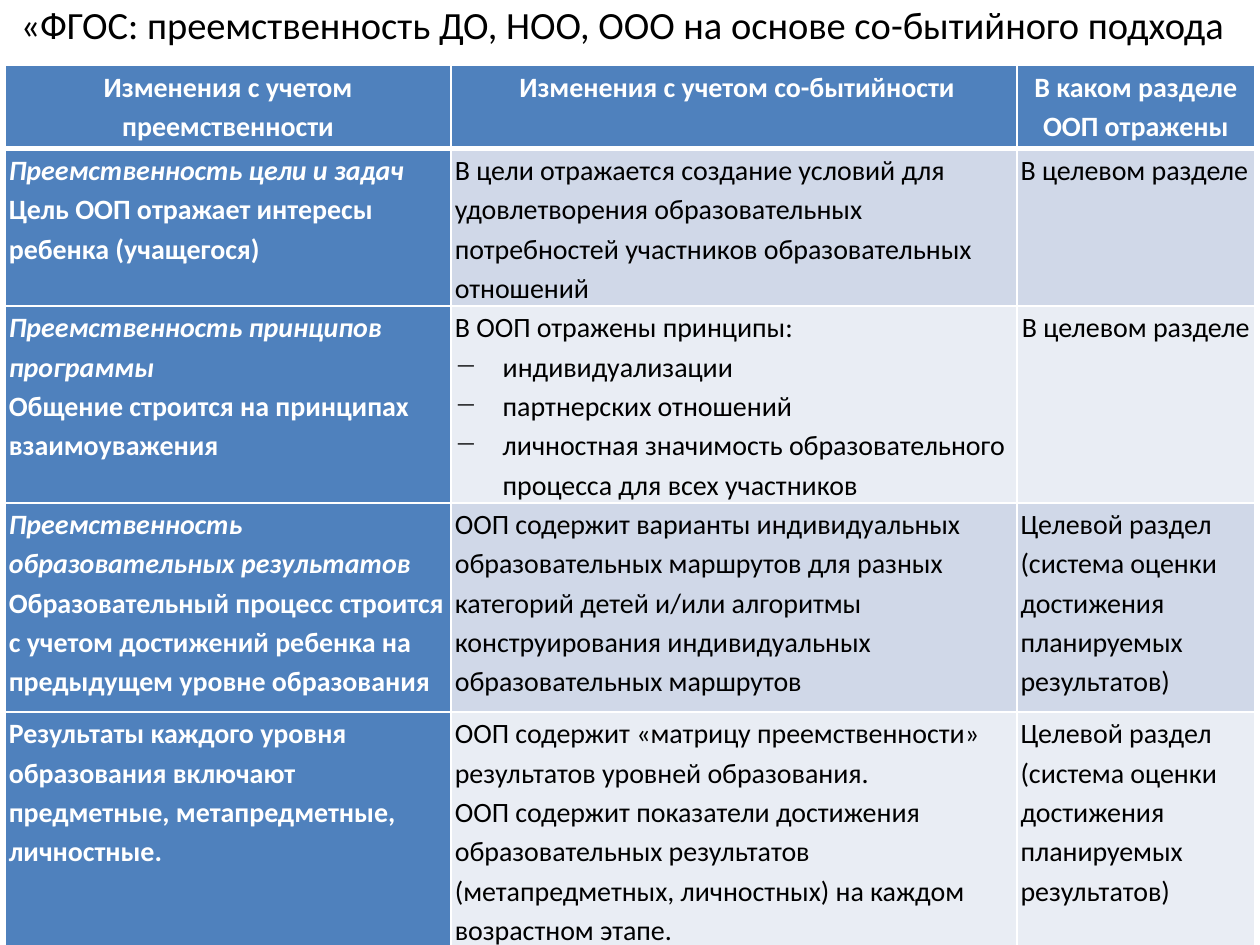
"""Builds a one-slide table on continuity between education levels."""
import pptx
import pptx.dml.color
import pptx.enum.text
import pptx.oxml
import pptx.oxml.ns
import pptx.util

Inches = pptx.util.Inches
Pt = pptx.util.Pt
CENTER = pptx.enum.text.PP_ALIGN.CENTER
LEFT = pptx.enum.text.PP_ALIGN.LEFT
WHITE, BLACK, BLUE = "FFFFFF", "000000", "4F81BD"
BANDS = ["D0D8E8", "E9EDF4"]


def color(value):
    return pptx.dml.color.RGBColor.from_string(value)


def element(xml):
    return pptx.oxml.parse_xml(xml.replace(" ", f" {pptx.oxml.ns.nsdecls('a')} ", 1))


class SlideBuilder:
    def __init__(self, slide, font="Calibri"):
        self.slide = slide
        self.font = font

    def style(self, paragraph, size, ink, bold=False, italic=False, align=LEFT):
        paragraph.alignment = align
        font = paragraph.font
        font.name, font.size = self.font, Pt(size)
        font.bold, font.italic = bold, italic
        font.color.rgb = color(ink)

    def title(self, text, left, top, width, height):
        box = self.slide.shapes.add_textbox(*map(Inches, (left, top, width, height)))
        frame = box.text_frame
        frame.word_wrap = True
        frame.vertical_anchor = pptx.enum.text.MSO_ANCHOR.MIDDLE
        frame.text = text
        self.style(frame.paragraphs[0], 22, BLACK, align=CENTER)

    def border(self, cell, sides):
        properties = cell._tc.get_or_add_tcPr()
        for index, (side, points) in enumerate(sides.items()):
            properties.insert(index, element(
                f'<a:ln{side} w="{Pt(points)}"><a:solidFill>'
                f'<a:srgbClr val="{WHITE}"/></a:solidFill></a:ln{side}>'))

    def bullet(self, paragraph):
        properties = paragraph._p.get_or_add_pPr()
        properties.set("marL", str(Inches(0.38)))
        properties.set("indent", str(-Inches(0.38)))
        properties.append(element('<a:buChar char="−"/>'))

    def cell(self, cell, lines, fill, ink, bold, align):
        cell.margin_left = cell.margin_right = Inches(0.03)
        cell.margin_top = cell.margin_bottom = 0
        cell.fill.solid()
        cell.fill.fore_color.rgb = color(fill)
        frame = cell.text_frame
        for index, (text, kind) in enumerate(lines):
            paragraph = frame.add_paragraph() if index else frame.paragraphs[0]
            paragraph.text = text
            paragraph.line_spacing = 1.15
            if kind == "bullet":
                self.bullet(paragraph)
            self.style(paragraph, 16, ink, bold, kind == "italic",
                       CENTER if kind == "center" else align)

    def table(self, rows, left, top, widths, heights):
        table = self.slide.shapes.add_table(
            len(rows), len(widths), Inches(left), Inches(top),
            Inches(sum(widths)), Inches(sum(heights))).table
        for column, width in zip(table.columns, widths):
            column.width = Inches(width)
        for row, height in zip(table.rows, heights):
            row.height = Inches(height)
        for r, row in enumerate(rows):
            for c, lines in enumerate(row):
                heading = r == 0 or c == 0
                cell = table.cell(r, c)
                self.cell(cell, lines, BLUE if heading else BANDS[(r - 1) % 2],
                          WHITE if heading else BLACK, heading,
                          LEFT if r else CENTER)
                sides = {"L": 1, "R": 1}
                if r == 0:
                    sides["T"] = 1
                sides["B"] = 1 if r else 3
                self.border(cell, sides)


def plain(*texts):
    return [(text, "plain") for text in texts]


def topic(name, text):
    return [(name, "italic"), (text, "plain")]


RESULTS_SECTION = plain("Целевой раздел (система оценки достижения планируемых результатов)")
PRINCIPLES = ["индивидуализации", "партнерских отношений",
              "личностная значимость образовательного процесса для всех участников"]
ROWS = [
    [plain("Изменения с учетом преемственности"),
     plain(" Изменения с учетом со-бытийности"),
     plain("В каком разделе ООП отражены")],
    [topic("Преемственность цели и задач",
           "Цель ООП отражает интересы ребенка (учащегося)"),
     plain("В цели отражается создание условий для удовлетворения образовательных "
           "потребностей участников образовательных отношений"),
     plain("В целевом разделе")],
    [topic("Преемственность принципов программы",
           "Общение строится на принципах взаимоуважения"),
     plain("В ООП отражены принципы:") + [(text, "bullet") for text in PRINCIPLES],
     [("В целевом разделе", "center")]],
    [topic("Преемственность образовательных результатов",
           "Образовательный процесс строится с учетом достижений ребенка на "
           "предыдущем уровне образования"),
     plain("ООП содержит варианты индивидуальных образовательных маршрутов для разных "
           "категорий детей и/или алгоритмы конструирования индивидуальных "
           "образовательных маршрутов"),
     RESULTS_SECTION],
    [plain("Результаты каждого уровня образования включают предметные, "
           "метапредметные, личностные."),
     plain("ООП содержит «матрицу преемственности» результатов уровней образования.",
           "ООП содержит показатели достижения образовательных результатов "
           "(метапредметных, личностных) на каждом возрастном этапе."),
     RESULTS_SECTION],
]


def main():
    deck = pptx.Presentation()
    deck.slide_width, deck.slide_height = Inches(10), Inches(7.5)
    builder = SlideBuilder(deck.slides.add_slide(deck.slide_layouts[6]))
    builder.table(ROWS, 0.04, 0.52, [3.54, 4.49, 1.89], [0.66, 1.19, 1.48, 1.66, 1.78])
    builder.title("«ФГОС: преемственность ДО, НОО, ООО на основе со-бытийного подхода",
                  0, 0, 9.88, 0.39)
    deck.save("out.pptx")


if __name__ == "__main__":
    main()
